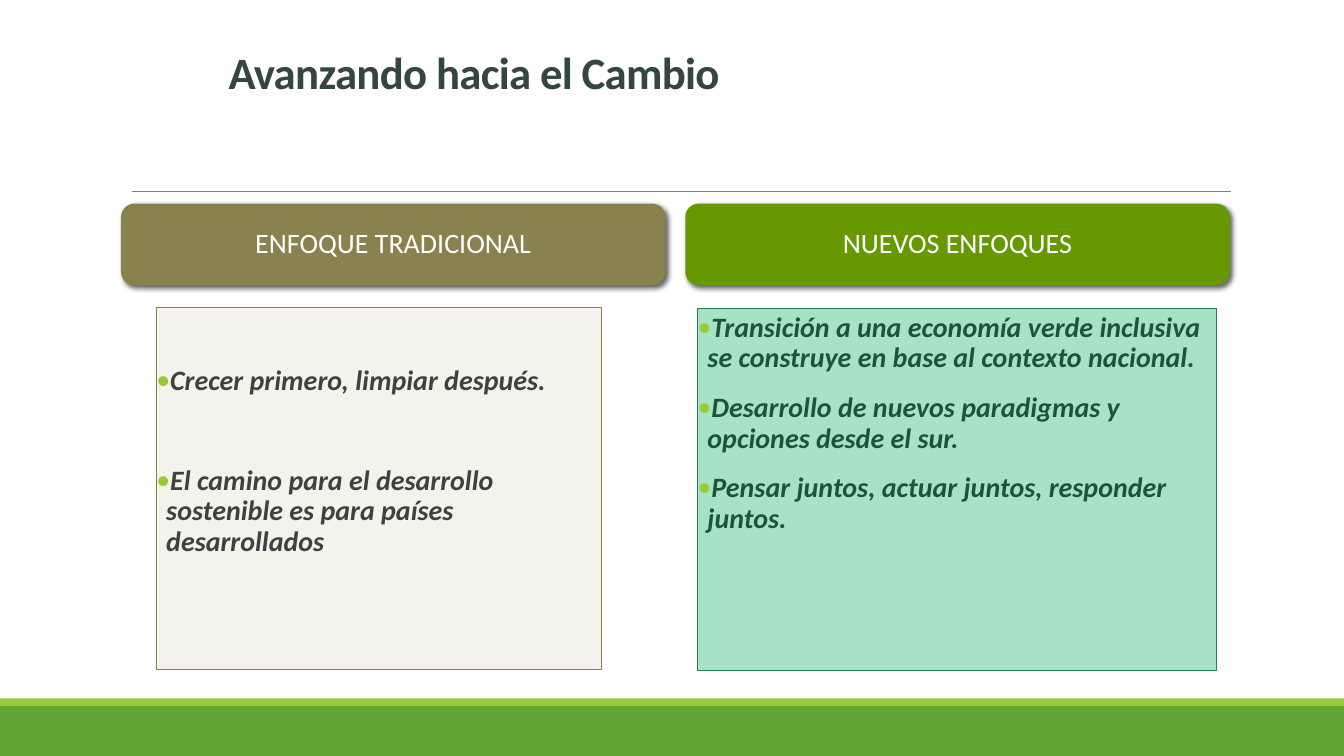
from lxml import etree
from pptx import Presentation
from pptx import util as u
from pptx.dml.color import RGBColor
from pptx.enum import shapes, text
from pptx.oxml.ns import qn

WHITE = RGBColor(0xFF, 0xFF, 0xFF)
GREEN = RGBColor(0x63, 0xA5, 0x37)
LIME = RGBColor(0x99, 0xCB, 0x38)
GRAY = RGBColor(0x80, 0x80, 0x80)
SLATE = RGBColor(0x34, 0x47, 0x3D)
OLIVE = RGBColor(0x89, 0x81, 0x4E)
CREAM = RGBColor(0xF3, 0xF2, 0xEB)
DARK = RGBColor(0x40, 0x40, 0x40)
LEAF = RGBColor(0x66, 0x99, 0x00)
MINT = RGBColor(0xA8, 0xE2, 0xC5)
PINE = RGBColor(0x29, 0x7D, 0x53)
DEEP = RGBColor(0x1C, 0x54, 0x38)

RECT = shapes.MSO_SHAPE.RECTANGLE
ROUND = shapes.MSO_SHAPE.ROUNDED_RECTANGLE
WIDE, HIGH = 33.87, 19.05
HEAD = 2.06
COLUMNS = [
    dict(box=(3.05, 5.13, 13.72, 11.74), title="ENFOQUE TRADICIONAL", color=OLIVE,
         panel=(0.89, 2.62, 11.23), fill=CREAM, edge=OLIVE, ink=DARK, top=1.48, gap=48,
         items=["Crecer primero, limpiar después.",
                "El camino para el desarrollo sostenible es para países desarrollados"]),
    dict(box=(17.27, 5.13, 13.72, 11.76), title="NUEVOS ENFOQUES", color=LEAF,
         panel=(0.31, 2.64, 13.08), fill=MINT, edge=PINE, ink=DEEP, top=0.13, gap=12,
         items=["Transición a una economía verde inclusiva se construye en base al "
                "contexto nacional.",
                "Desarrollo de nuevos paradigmas y opciones desde el sur.",
                "Pensar juntos, actuar juntos, responder juntos."]),
]


def apply(item, **values):
    """Set each given attribute on an object."""
    for name, value in values.items():
        setattr(item, name, value)


def add(parent, tag, **values):
    """Append an XML child with the given attributes."""
    node = etree.SubElement(parent, qn(tag))
    for name, value in values.items():
        node.set(name, str(value))
    return node


def block(slide, kind, box, fill, edge=None):
    """Draw a filled shape in a box, with an optional outline."""
    shape = slide.shapes.add_shape(kind, *map(u.Cm, box))
    shape.shadow.inherit = False
    shape.fill.solid()
    shape.fill.fore_color.rgb = fill
    if edge is None:
        shape.line.fill.background()
    else:
        shape.line.color.rgb = edge
        shape.line.width = u.Pt(0.75)
    return shape


def write(para, words, color, size=20, **style):
    """Write one run of styled text in a paragraph."""
    run = para.add_run()
    run.text = words
    apply(run.font, name="Calibri", size=u.Pt(size), **style)
    run.font.color.rgb = color
    return run


def shade(shape):
    """Give a shape a soft shadow to the lower right."""
    glow = add(shape._element.spPr.find(qn("a:effectLst")), "a:outerShdw",
               blurRad=u.Pt(3.5), dist=u.Pt(2), dir=45 * 60000, algn="tl", rotWithShape=0)
    add(add(glow, "a:srgbClr", val="000000"), "a:alpha", val=60000)


def bullet(para):
    """Give a paragraph a hanging lime bullet."""
    props = para._p.get_or_add_pPr()
    props.set("marL", str(u.Cm(0.25)))
    props.set("indent", str(-u.Cm(0.25)))
    add(add(props, "a:buClr"), "a:srgbClr", val=LIME)
    add(props, "a:buFont", typeface="Calibri")
    add(props, "a:buChar", char="•")


def footer(slide, box):
    """Draw the green band with its lime strip on top."""
    x, y, w, h = box
    strip = 0.19
    block(slide, RECT, (x, y + strip, w, h - strip), GREEN)
    block(slide, RECT, (x, y, w, strip), LIME)


def header(slide, box):
    """Draw the title and the rule below it."""
    x, y, w, h = box
    rule = slide.shapes.add_connector(
        shapes.MSO_CONNECTOR.STRAIGHT, u.Cm(x), u.Cm(y + h), u.Cm(x + w), u.Cm(y + h))
    rule.line.color.rgb = GRAY
    rule.line.width = u.Pt(0.5)
    add(rule._element.spPr, "a:effectLst")
    frame = slide.shapes.add_textbox(u.Cm(x + 2.18), u.Cm(y), u.Cm(22.86), u.Cm(1.85)).text_frame
    apply(frame, word_wrap=True, vertical_anchor=text.MSO_ANCHOR.BOTTOM)
    para = frame.paragraphs[0]
    para.line_spacing = 0.85
    run = write(para, "Avanzando hacia el Cambio", SLATE, 32, bold=True)
    run._r.get_or_add_rPr().set("spc", "-50")


def column(slide, box, title, color, panel, fill, edge, ink, top, gap, items):
    """Draw a heading and its bullet panel."""
    x, y, w, h = box
    head = block(slide, ROUND, (x, y, w, HEAD), color)
    shade(head)
    apply(head.text_frame, word_wrap=True, vertical_anchor=text.MSO_ANCHOR.MIDDLE)
    para = head.text_frame.paragraphs[0]
    apply(para, alignment=text.PP_ALIGN.CENTER, line_spacing=0.9, space_after=u.Pt(2))
    write(para, title, WHITE)

    dx, dy, width = panel
    frame = block(slide, RECT, (x + dx, y + dy, width, h - dy), fill, edge).text_frame
    apply(frame, word_wrap=True, vertical_anchor=text.MSO_ANCHOR.TOP, margin_left=0,
          margin_right=0, margin_top=u.Cm(top), margin_bottom=u.Cm(0.13))
    for i, words in enumerate(items):
        para = frame.add_paragraph() if i else frame.paragraphs[0]
        bullet(para)
        apply(para, alignment=text.PP_ALIGN.LEFT, line_spacing=0.9,
              space_before=u.Pt(gap if i else 0), space_after=u.Pt(2))
        write(para, words, ink, bold=True, italic=True)


def main():
    """Build the slide and save it."""
    deck = Presentation()
    apply(deck, slide_width=u.Cm(WIDE), slide_height=u.Cm(HIGH))
    slide = deck.slides.add_slide(deck.slide_layouts[6])
    footer(slide, (0, 17.6, WIDE, HIGH - 17.6))
    header(slide, (3.33, 0.76, 27.68, 4.06))
    for col in COLUMNS:
        column(slide, **col)
    deck.save("out.pptx")


if __name__ == "__main__":
    main()
